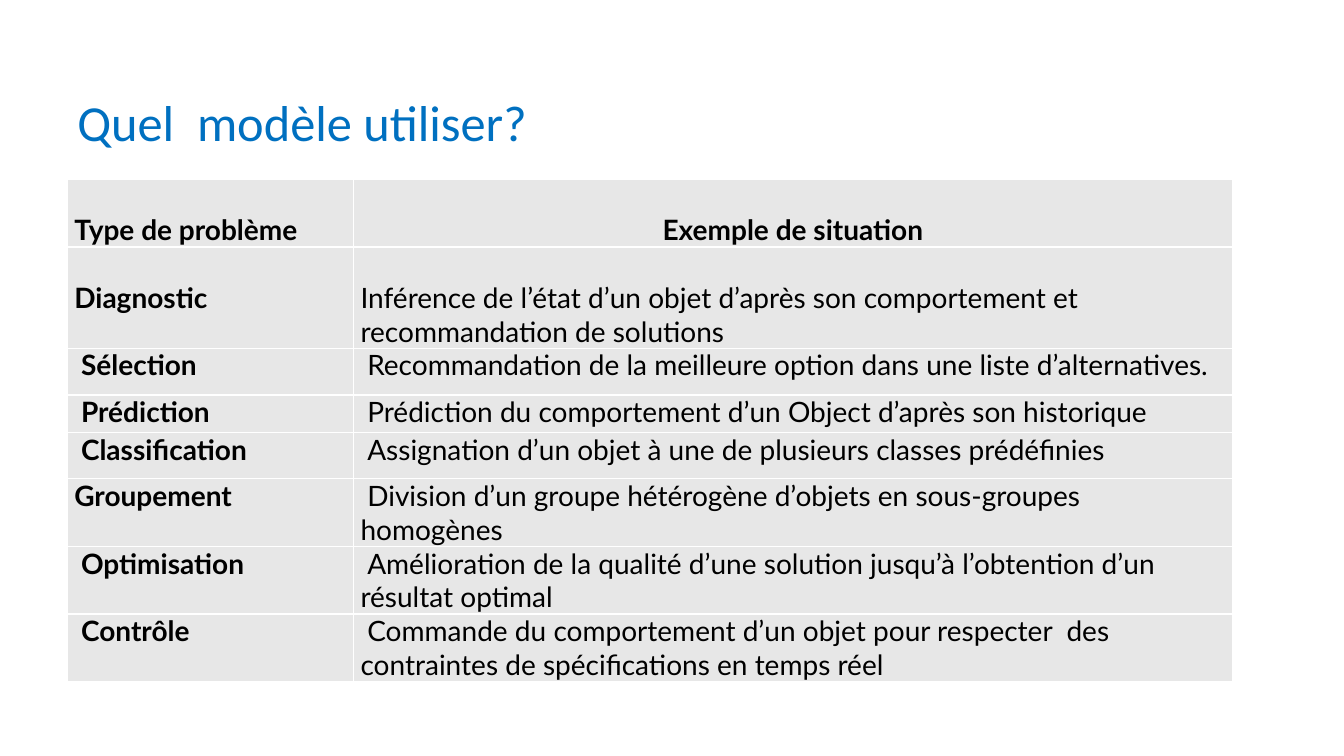
from dataclasses import dataclass

from lxml.etree import SubElement
from pptx import Presentation
from pptx.dml.color import RGBColor
from pptx.enum.text import MSO_ANCHOR, PP_ALIGN
from pptx.oxml.ns import qn
from pptx.table import Table, _Cell
from pptx.util import Inches, Length, Pt

COLORS = {"title": "0070C0", "text": "000000", "cell": "E7E7E7", "border": "FFFFFF"}
SLIDE_WIDTH = Inches(13.33)
SLIDE_HEIGHT = Inches(7.5)
LEFT = 5
TITLE_TOP, TITLE_WIDTH, TITLE_HEIGHT = 6.53, 90, 20
TABLE_TOP = 23.73
COLUMN_WIDTHS = (21.3, 65.4)
LINE = 4.45
SIDE_MARGIN = 0.53
FIRST_INDENT = 0.5


@dataclass(frozen=True)
class ProblemRow:
    problem: str
    example: str
    height: float
    lines_above: int = 0
    problem_indent: float = FIRST_INDENT
    example_indent: float = FIRST_INDENT
    is_header: bool = False


ROWS = (
    ProblemRow("Type de problème", "Exemple de situation", 8.93, 1, 0, 0, True),
    ProblemRow(
        "Diagnostic",
        "Inférence de l’état d’un objet d’après son comportement et recommandation de solutions",
        13.35, 1, 0, 0,
    ),
    ProblemRow("Sélection", "Recommandation de la meilleure option dans une liste d’alternatives.", 6.2),
    ProblemRow("Prédiction", "Prédiction du comportement d’un Object d’après son historique", 4.95),
    ProblemRow("Classification", "Assignation d’un objet à une de plusieurs classes prédéfinies", 6.15),
    ProblemRow(
        "Groupement",
        "Division d’un groupe hétérogène d’objets en sous-groupes homogènes",
        8.93, problem_indent=0,
    ),
    ProblemRow(
        "Optimisation",
        "Amélioration de la qualité d’une solution jusqu’à l’obtention d’un résultat optimal",
        8.93,
    ),
    ProblemRow(
        "Contrôle",
        "Commande du comportement d’un objet pour respecter  des contraintes de spécifications en temps réel",
        8.93,
    ),
)


def across(percent: float) -> Length:
    return Length(round(SLIDE_WIDTH * percent / 100))


def down(percent: float) -> Length:
    return Length(round(SLIDE_HEIGHT * percent / 100))


def add_borders(cell: _Cell) -> None:
    properties = cell._tc.get_or_add_tcPr()
    for position, side in enumerate(("a:lnL", "a:lnR", "a:lnT", "a:lnB")):
        line = SubElement(properties, qn(side), w=str(Pt(1)))
        fill = SubElement(line, qn("a:solidFill"))
        SubElement(fill, qn("a:srgbClr"), val=COLORS["border"])
        properties.insert(position, line)


def write_cell(cell: _Cell, text: str, bold: bool, alignment: PP_ALIGN, indent: float, lines_above: int) -> None:
    cell.fill.solid()
    cell.fill.fore_color.rgb = RGBColor.from_string(COLORS["cell"])
    add_borders(cell)
    cell.margin_left = cell.margin_right = across(SIDE_MARGIN)
    cell.margin_top = down(LINE * lines_above)
    cell.margin_bottom = 0
    cell.text = text
    para = cell.text_frame.paragraphs[0]
    para.alignment = alignment
    para.font.name = "Lato"
    para.font.size = Pt(20)
    para.font.bold = bold
    para.font.color.rgb = RGBColor.from_string(COLORS["text"])
    para._p.get_or_add_pPr().set("indent", str(across(indent)))


def fill_table(table: Table) -> None:
    table.first_row = False
    table.horz_banding = False
    for column, width in zip(table.columns, COLUMN_WIDTHS):
        column.width = across(width)
    for index, row in enumerate(ROWS):
        table.rows[index].height = down(row.height)
        example_alignment = PP_ALIGN.CENTER if row.is_header else PP_ALIGN.LEFT
        write_cell(table.cell(index, 0), row.problem, True, PP_ALIGN.LEFT,
                   row.problem_indent, row.lines_above)
        write_cell(table.cell(index, 1), row.example, row.is_header, example_alignment,
                   row.example_indent, row.lines_above)


def main() -> None:
    deck = Presentation()
    deck.slide_width, deck.slide_height = SLIDE_WIDTH, SLIDE_HEIGHT
    page = deck.slides.add_slide(deck.slide_layouts[5])

    title = page.shapes.title
    title.left, title.top = across(LEFT), down(TITLE_TOP)
    title.width, title.height = across(TITLE_WIDTH), down(TITLE_HEIGHT)
    title.text_frame.text = "Quel  modèle utiliser?"
    title.text_frame.vertical_anchor = MSO_ANCHOR.MIDDLE
    para = title.text_frame.paragraphs[0]
    para.alignment = PP_ALIGN.LEFT
    para.line_spacing = 0.9
    para.font.name = "Calibri"
    para.font.size = Pt(36)
    para.font.color.rgb = RGBColor.from_string(COLORS["title"])

    frame = page.shapes.add_table(
        len(ROWS), len(COLUMN_WIDTHS), across(LEFT), down(TABLE_TOP),
        across(sum(COLUMN_WIDTHS)), down(sum(row.height for row in ROWS)),
    )
    fill_table(frame.table)
    deck.save("out.pptx")


if __name__ == "__main__":
    main()
